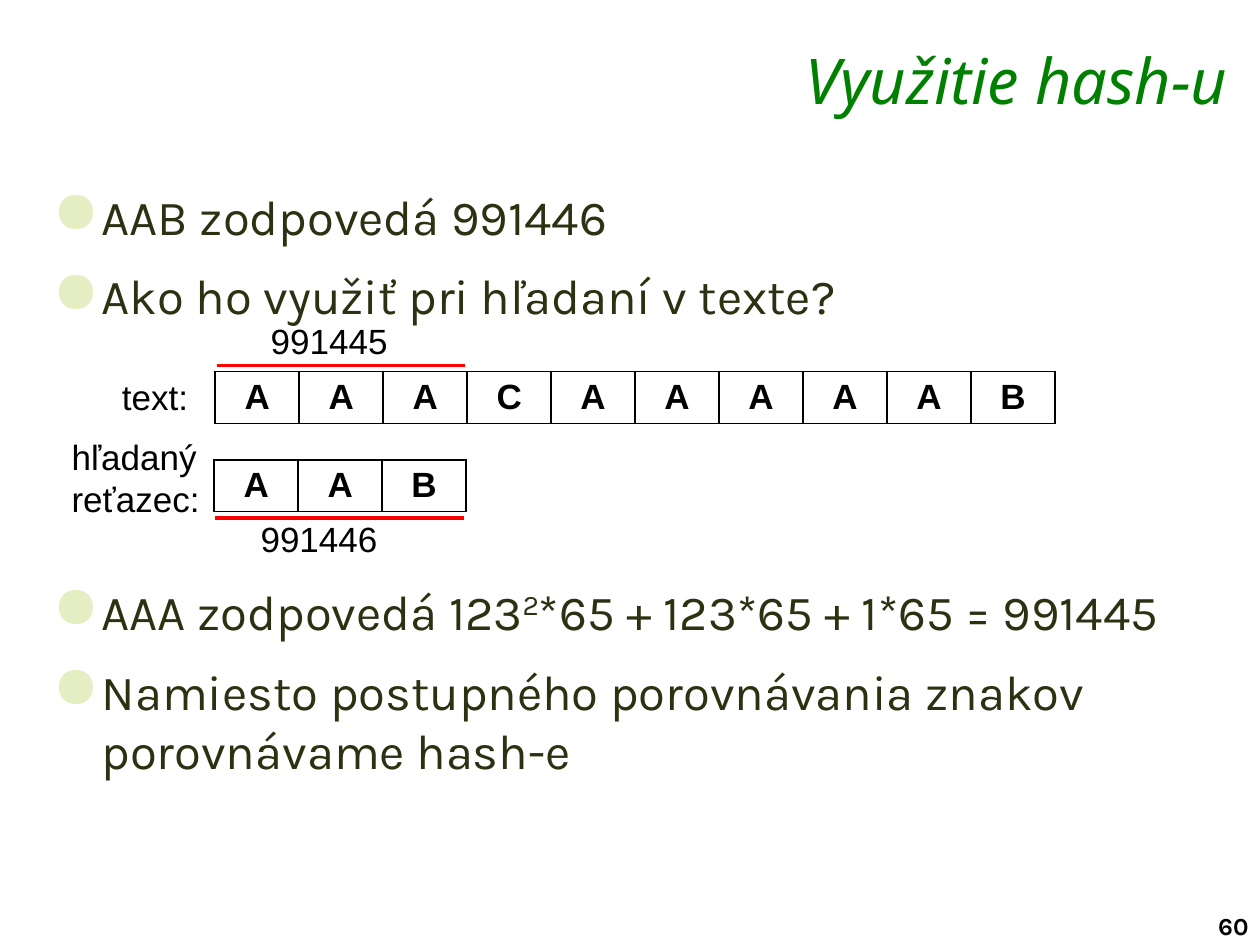
from pptx import Presentation
from pptx.dml.color import RGBColor
from pptx.enum.shapes import MSO_CONNECTOR
from pptx.enum.text import MSO_ANCHOR, PP_ALIGN
from pptx.oxml import parse_xml
from pptx.oxml.ns import nsdecls
from pptx.util import Pt

ARIAL = {"name": "Arial", "size": Pt(20), "color": "000000"}
CELL = {**ARIAL, "bold": True}
TITLE = {"name": "Noto Sans", "size": Pt(36), "italic": True, "color": "008000"}
BODY = {"name": "Karla", "size": Pt(28), "color": "2B3212"}
NUMBER = {"name": "Karla", "size": Pt(14), "bold": True, "color": "000000"}

# Space before in points, then runs of (text, is superscript)
BULLETS = [
    (0, [("AAB zodpovedá 991446", False)]),
    (6, [("Ako ho využiť pri hľadaní v texte?", False)]),
    (140.6, [("AAA zodpovedá 123", False), ("2", True),
             ("*65 + 123*65 + 1*65 = 991445", False)]),
    (6, [("Namiesto postupného porovnávania znakov porovnávame hash-e", False)]),
]
# Lines, left, top, width, height
LABELS = [
    (["text:"], 62.6, 211, 52.6, 31.7),
    (["hľadaný", "reťazec:"], 33.8, 245.5, 90, 55.4),
    (["991446"], 141.8, 292.3, 82, 31.7),
    (["991445"], 147.6, 179.3, 82, 31.7),
]
# Letters, left, top
LETTER_ROWS = [("AAACAAAAAB", 123, 212.4), ("AAB", 122.4, 262.8)]
# Left, height on the slide
HASH_LINES = [(123.8, 208.8), (123.1, 295.9)]
CELL_WIDTH, CELL_HEIGHT, HASH_WIDTH = 48, 29.5, 141.8


def rgb(value):
    return RGBColor.from_string(value)


def set_font(font, values):
    for key, value in values.items():
        if key == "color":
            font.color.rgb = rgb(value)
        else:
            setattr(font, key, value)


def add_text(slide, lines, left, top, width, height, values, wrap=False):
    box = slide.shapes.add_textbox(Pt(left), Pt(top), Pt(width), Pt(height))
    frame = box.text_frame
    frame.word_wrap = wrap
    frame.text = "\n".join(lines)
    for paragraph in frame.paragraphs:
        set_font(paragraph.runs[0].font, values)
    return frame


def add_bullets(slide):
    box = slide.shapes.add_textbox(Pt(23), Pt(102.8), Pt(675.4), Pt(415))
    frame = box.text_frame
    frame.word_wrap = True
    for index, (space_before, runs) in enumerate(BULLETS):
        paragraph = frame.paragraphs[0] if index == 0 else frame.add_paragraph()
        paragraph.space_before, paragraph.space_after = Pt(space_before), Pt(6)
        properties = paragraph._p.get_or_add_pPr()
        properties.set("marL", str(Pt(28)))
        properties.set("indent", str(-Pt(28)))
        for element in ('<a:buClr {}><a:srgbClr val="E5EEC2"/></a:buClr>',
                        '<a:buSzPct {} val="120000"/>',
                        '<a:buChar {} char="●"/>'):
            properties.append(parse_xml(element.format(nsdecls("a"))))
        for text, superscript in runs:
            run = paragraph.add_run()
            run.text = text
            set_font(run.font, BODY)
            if superscript:
                run._r.get_or_add_rPr().set("baseline", "30000")


def add_borders(cell):
    properties = cell._tc.get_or_add_tcPr()
    for index, side in enumerate("LRTB"):
        properties.insert(index, parse_xml(
            f'<a:ln{side} {nsdecls("a")} w="{Pt(1)}"><a:solidFill>'
            f'<a:srgbClr val="000000"/></a:solidFill></a:ln{side}>'))


def add_letters(slide, letters, left, top):
    table = slide.shapes.add_table(
        1, len(letters), Pt(left), Pt(top),
        Pt(CELL_WIDTH * len(letters)), Pt(CELL_HEIGHT)).table
    for column, letter in enumerate(letters):
        table.columns[column].width = Pt(CELL_WIDTH)
        cell = table.cell(0, column)
        cell.text = letter
        cell.margin_top = cell.margin_bottom = 0
        cell.vertical_anchor = MSO_ANCHOR.MIDDLE
        cell.fill.solid()
        cell.fill.fore_color.rgb = rgb("FFFFFF")
        add_borders(cell)
        paragraph = cell.text_frame.paragraphs[0]
        paragraph.alignment = PP_ALIGN.CENTER
        set_font(paragraph.runs[0].font, CELL)


def add_hash_line(slide, left, top):
    line = slide.shapes.add_connector(
        MSO_CONNECTOR.STRAIGHT, Pt(left), Pt(top), Pt(left + HASH_WIDTH), Pt(top))
    line.line.color.rgb = rgb("FF0000")
    line.line.width = Pt(2)
    line._element.spPr.append(parse_xml(f'<a:effectLst {nsdecls("a")}/>'))


def main():
    presentation = Presentation()
    presentation.slide_width, presentation.slide_height = Pt(720), Pt(540)
    slide = presentation.slides.add_slide(presentation.slide_layouts[6])
    add_text(slide, ["60"], 689, 517, 36.7, 23.8, NUMBER)
    title = add_text(slide, ["Využitie hash-u"], 164.9, 22.3, 543.6, 41.8, TITLE, True)
    title.margin_top = Pt(1.5)
    title.paragraphs[0].alignment = PP_ALIGN.RIGHT
    add_bullets(slide)
    for row in LETTER_ROWS:
        add_letters(slide, *row)
    for label in LABELS:
        add_text(slide, *label, ARIAL)
    for hash_line in HASH_LINES:
        add_hash_line(slide, *hash_line)
    presentation.save("out.pptx")


if __name__ == "__main__":
    main()
